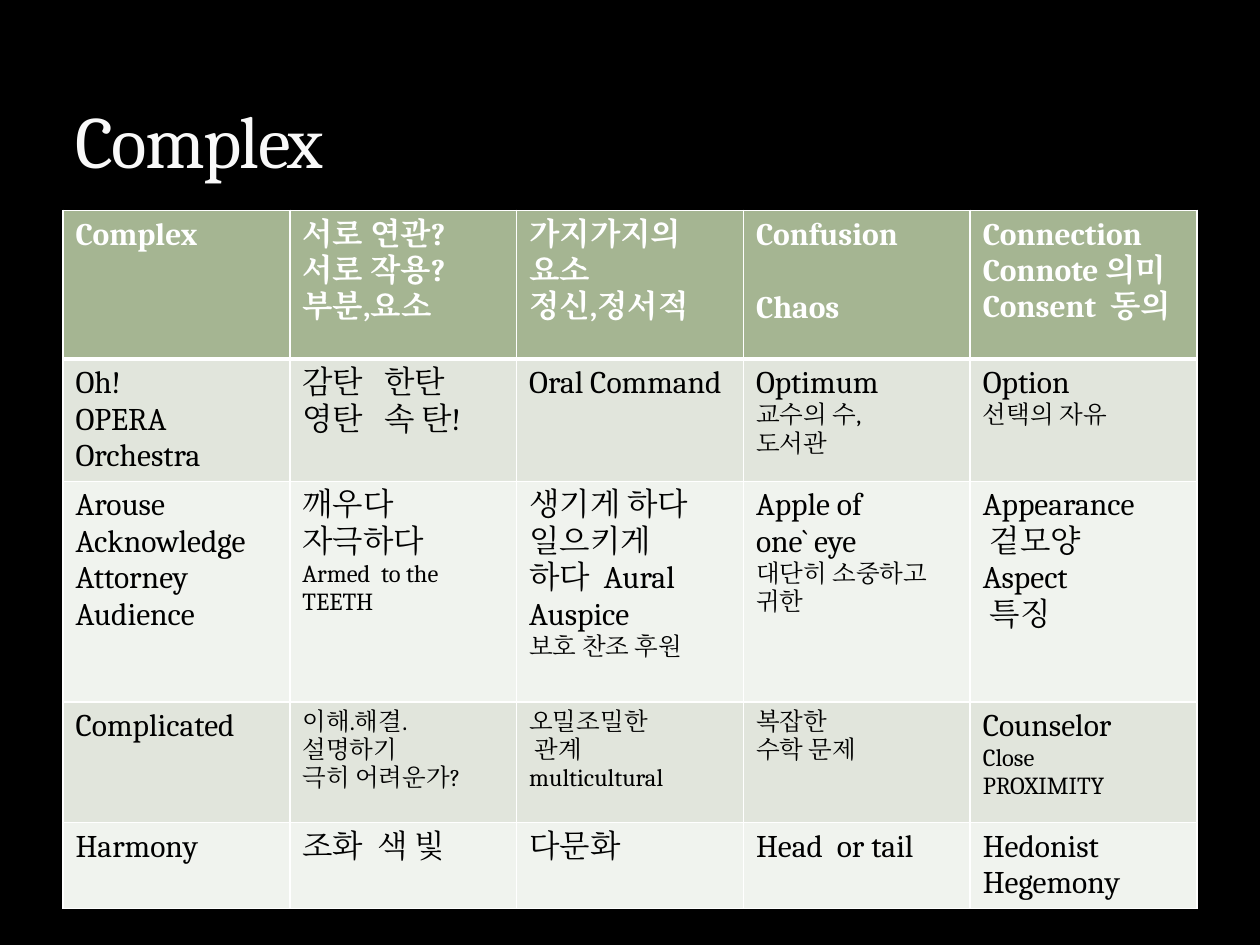
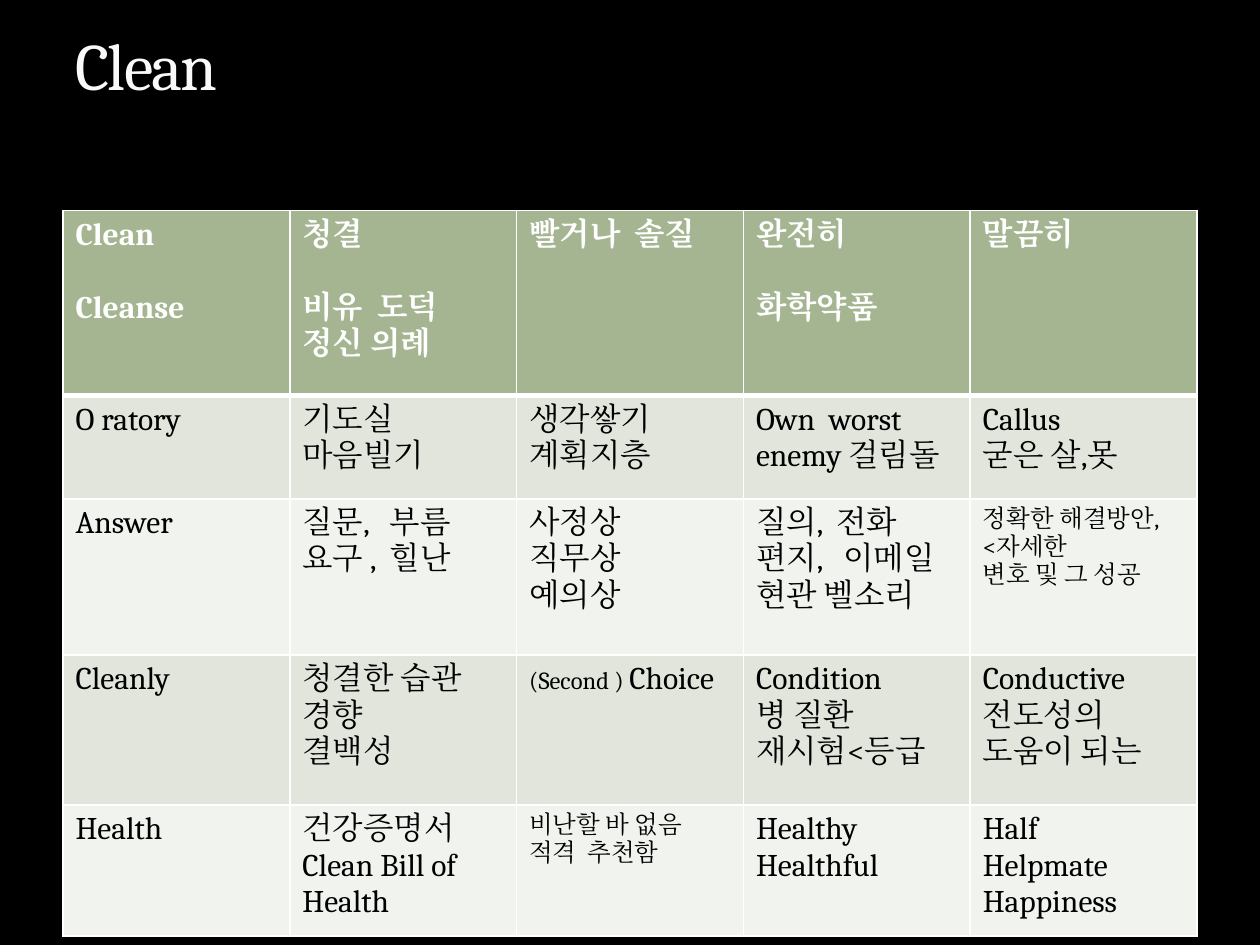
"""Build two vocabulary slides, each a title above a five-column word table."""
import pptx
import pptx.dml.color
import pptx.enum.text
import pptx.oxml
import pptx.oxml.ns
import pptx.util

Inches = pptx.util.Inches
Pt = pptx.util.Pt

# "|" parts lines, "+" parts runs, "~" is small text, "^" adds a gap above.
SLIDES = [
    {"title": "Complex", "size": 42, "foot": 0.05,
     "highs": [1.18, 0.97, 1.75, 0.96, 0.68], "rows": [
        ["Complex", "서로 연관?|서로 작용?|부분,요소", "가지가지의|요소|정신,정서적",
         "Confusion|^Chaos", "Connection|Connote 의미|Consent  동의"],
        ["Oh!|OPERA|Orchestra", "감탄   한탄|영탄   속 탄!", "Oral Command",
         "Optimum|~교수의 수,|~도서관", "Option|~선택의 자유"],
        ["Arouse|Acknowledge|Attorney|Audience",
         "깨우다|자극하다|~Armed  to the TEETH",
         "생기게 하다|일으키게|하다  Aural|Auspice|~보호 찬조 후원",
         "Apple of|one` eye|~대단히 소중하고 귀한",
         "Appearance| 겉모양|Aspect| 특징"],
        ["Complicated", "~이해.해결.|~설명하기|~극히 어려운가?",
         "~오밀조밀한|~ 관계|~multicultural", "~복잡한|~수학 문제",
         "Counselor|~Close|~PROXIMITY"],
        ["Harmony", "조화  색 빛", "다문화", "Head  or tail", "Hedonist|Hegemony"],
    ]},
    {"title": "Clean", "size": 37.8, "foot": 0.68,
     "highs": [1.47, 0.82, 1.24, 1.19, 1.04], "rows": [
        ["Clean|^Cleanse", "청결|^비유  도덕|정신 의례", "빨거나  솔질",
         "완전히|^화학약품", "말끔히"],
        ["O ratory", "기도실|마음빌기", "생각쌓기|계획지층",
         "Own  worst enemy 걸림돌", "Callus|굳은 살,못"],
        ["Answer", "질문,   부름|요구 ,  힐난", "사정상|직무상|예의상",
         "질의,  전화|편지,   이메일|현관 벨소리",
         "~정확한 해결방안,|~<자세한|~변호 및 그 성공"],
        ["Cleanly", "청결한 습관|경향|결백성", "~(Second ) +Choice",
         "Condition|병 질환|재시험<등급", "Conductive|전도성의|도움이 되는"],
        ["Health", "건강증명서|Clean Bill of|Health", "~비난할 바 없음|~적격  추천함",
         "Healthy|Healthful", "Half|Helpmate|Happiness"],
    ]},
]

COLORS = {"back": "000000", "title": "F9F9F9", "head": "A5B592",
          "odd": "E1E5DC", "even": "F0F3EE", "text": "000000", "line": "FFFFFF"}
FONT = "Cambria"
LEFT, WIDTH = 0.5, 9
BODY, SMALL, GAP = 18, 14, 21
SPACE = pptx.oxml.ns.nsdecls("a")


def color(key):
    return pptx.dml.color.RGBColor.from_string(COLORS[key])


def paint(fill, key):
    fill.solid()
    fill.fore_color.rgb = color(key)


def style(font, key, bold=False):
    font.name = FONT
    font.bold = bold
    font.color.rgb = color(key)
    font._rPr.append(pptx.oxml.parse_xml(f'<a:ea {SPACE} typeface="{FONT}"/>'))


def add_title(slide, data):
    box = slide.shapes.add_textbox(Inches(LEFT), Inches(0.17), Inches(WIDTH), Inches(1.33))
    frame = box.text_frame
    frame.word_wrap = True
    frame.vertical_anchor = pptx.enum.text.MSO_ANCHOR.BOTTOM
    frame.margin_bottom = Inches(data["foot"])
    para = frame.paragraphs[0]
    run = para.add_run()
    run.text = data["title"]
    style(para.font, "title")
    para.font.size = Pt(data["size"])
    run._r.get_or_add_rPr().set("spc", "-100")


def add_edges(cell, head):
    props = cell._tc.get_or_add_tcPr()
    for spot, side in enumerate("LRTB"):
        width = Pt(3 if head and side == "B" else 1)
        props.insert(spot, pptx.oxml.parse_xml(
            f'<a:ln{side} {SPACE} w="{width}"><a:solidFill>'
            f'<a:srgbClr val="{COLORS["line"]}"/></a:solidFill></a:ln{side}>'))


def fill_text(cell, text, head):
    frame = cell.text_frame
    for num, line in enumerate(text.split("|")):
        para = frame.add_paragraph() if num else frame.paragraphs[0]
        style(para.font, "line" if head else "text", head)
        if line.startswith("^"):
            para.space_before = Pt(GAP)
        parts = line.lstrip("^").split("+")
        for part in parts:
            run = para.add_run()
            run.text = part.lstrip("~")
            size = Pt(SMALL if part.startswith("~") else BODY)
            target = para if len(parts) == 1 else run
            target.font.size = size


def add_grid(slide, rows, highs):
    frame = slide.shapes.add_table(len(rows), len(rows[0]), Inches(LEFT), Inches(1.67),
                                   Inches(WIDTH), Inches(sum(highs)))
    table = frame.table
    for r, texts in enumerate(rows):
        table.rows[r].height = Inches(highs[r])
        head = r == 0
        for c, text in enumerate(texts):
            cell = table.cell(r, c)
            paint(cell.fill, "head" if head else "odd" if r % 2 else "even")
            add_edges(cell, head)
            fill_text(cell, text, head)


def main():
    deck = pptx.Presentation()
    deck.slide_width, deck.slide_height = Inches(10), Inches(7.5)
    for data in SLIDES:
        slide = deck.slides.add_slide(deck.slide_layouts[6])
        paint(slide.background.fill, "back")
        add_grid(slide, data["rows"], data["highs"])
        add_title(slide, data)
    deck.save("out.pptx")


if __name__ == "__main__":
    main()
